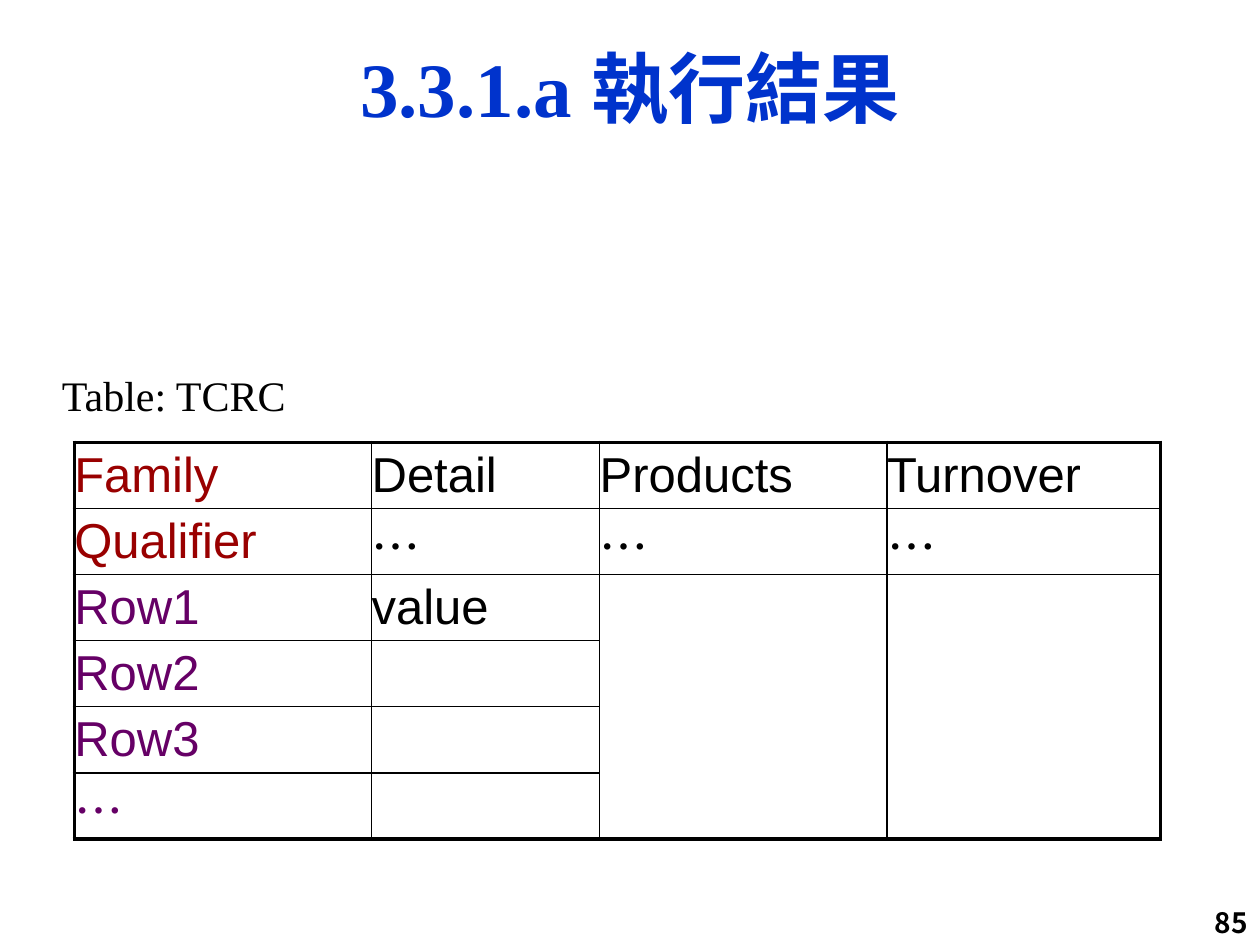
"""Build the slide that shows the layout of table TCRC."""
from lxml.etree import SubElement
from pptx import Presentation
from pptx.dml.color import RGBColor
from pptx.enum.text import MSO_ANCHOR as ANCHOR, PP_ALIGN as ALIGN
from pptx.oxml.ns import qn
from pptx.util import Inches, Pt

BLACK = RGBColor(0x00, 0x00, 0x00)
WHITE = RGBColor(0xFF, 0xFF, 0xFF)
BLUE = RGBColor(0x00, 0x33, 0xCC)
RED = RGBColor(0x99, 0x00, 0x00)
PURPLE = RGBColor(0x66, 0x00, 0x66)
SERIF, SANS, CJK = "Times New Roman", "Arial", "Noto Sans CJK SC"


def write(tf, text, font, size, color, bold=False, align=ALIGN.LEFT):
    tf.text = text
    tf.word_wrap = True
    tf.vertical_anchor = ANCHOR.MIDDLE
    p = tf.paragraphs[0]
    p.alignment = align
    p.space_before = Pt(0)
    r = p.runs[0]
    r.font.name, r.font.size, r.font.bold = font, Pt(size), bold
    r.font.color.rgb = color
    SubElement(r.font._element, qn("a:ea"), typeface=CJK)


def border(cell, side, width):
    ln = SubElement(cell._tc.get_or_add_tcPr(), qn(f"a:ln{side}"), w=str(Pt(width)))
    fill = SubElement(ln, qn("a:solidFill"))
    SubElement(fill, qn("a:srgbClr"), val=str(BLACK))


prs = Presentation()
prs.slide_width, prs.slide_height = Inches(10), Inches(7.5)
s = prs.slides.add_slide(prs.slide_layouts[5])

title = s.shapes.title
title.left, title.top = Inches(0.75), Inches(0.21)
title.width, title.height = Inches(8.5), Inches(0.95)
write(title.text_frame, "3.3.1.a 執行結果", SERIF, 44, BLUE, True, ALIGN.CENTER)

number = s.shapes.add_textbox(Inches(9.02), Inches(7.14), Inches(0.98), Inches(0.36))
number.text_frame.margin_top = number.text_frame.margin_bottom = 0
write(number.text_frame, "85", CJK, 16, BLACK, True, ALIGN.RIGHT)

caption = s.shapes.add_textbox(Inches(0.2), Inches(2.88), Inches(2.36), Inches(0.5))
write(caption.text_frame, "Table: TCRC", SERIF, 24, BLACK, align=ALIGN.CENTER)

rows = [
    ["Family", "Detail", "Products", "Turnover"],
    ["Qualifier", "…", "…", "…"],
    ["Row1", "value", "", ""],
    ["Row2", "", "", ""],
    ["Row3", "", "", ""],
    ["…", "", "", ""],
]
widths = [2.36, 1.81, 2.28, 2.17]
last_row, last_col = len(rows) - 1, len(widths) - 1
table = s.shapes.add_table(len(rows), len(widths), Inches(0.59), Inches(3.51),
                           Inches(sum(widths)), Inches(3.15)).table
table.first_row = table.horz_banding = False
for column, width in zip(table.columns, widths):
    column.width = Inches(width)
for col in (2, 3):
    table.cell(2, col).merge(table.cell(last_row, col))

for i, row in enumerate(rows):
    for j, text in enumerate(row):
        cell = table.cell(i, j)
        cell.margin_left = cell.margin_right = cell.margin_top = cell.margin_bottom = 0
        cell.vertical_anchor = ANCHOR.MIDDLE
        bottom = last_row if cell.is_merge_origin else i
        edges = {"L": j == 0, "R": j == last_col, "T": i == 0, "B": bottom == last_row}
        for side, outer in edges.items():
            inside_merge = cell.is_spanned and (side == "T" or side == "B" and not outer)
            if not inside_merge:
                border(cell, side, 2.25 if outer else 1)
        cell.fill.solid()
        cell.fill.fore_color.rgb = WHITE
        if text:
            color = BLACK if j else RED if i < 2 else PURPLE
            write(cell.text_frame, text, CJK if text == "…" else SANS, 28, color)

prs.save("out.pptx")
